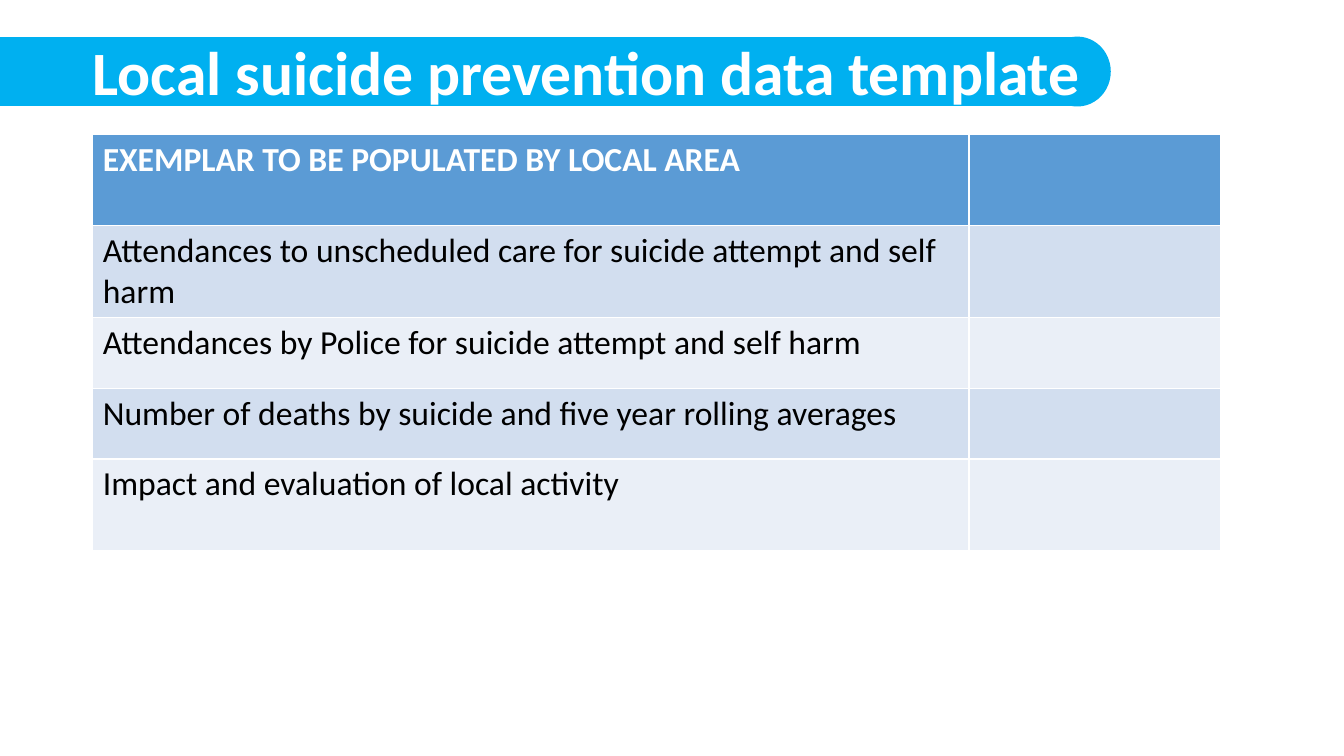
"""Build the local suicide prevention data template slide."""
from pptx import Presentation
from pptx.dml.color import RGBColor
from pptx.enum.shapes import MSO_SHAPE
from pptx.enum.text import MSO_ANCHOR, MSO_AUTO_SIZE, PP_ALIGN
from pptx.util import Inches, Pt

RECTANGLE, OVAL = MSO_SHAPE.RECTANGLE, MSO_SHAPE.OVAL
MIDDLE, LEFT, NO_FIT = MSO_ANCHOR.MIDDLE, PP_ALIGN.LEFT, MSO_AUTO_SIZE.NONE
TITLE_ONLY = 5

WHITE = RGBColor(0xFF, 0xFF, 0xFF)
BLACK = RGBColor(0x00, 0x00, 0x00)
BANNER_BLUE = RGBColor(0x00, 0xB0, 0xF0)
HEADER_BLUE = RGBColor(0x5B, 0x9B, 0xD5)
BANDS = [RGBColor(0xEA, 0xEF, 0xF7), RGBColor(0xD2, 0xDE, 0xEF)]

TITLE = "Local suicide prevention data template"
ROWS = [
    ("EXEMPLAR TO BE POPULATED BY LOCAL AREA", 0.91),
    ("Attendances to unscheduled care for suicide attempt and self harm", 0.91),
    ("Attendances by Police for suicide attempt and self harm", 0.7),
    ("Number of deaths by suicide and five year rolling averages", 0.7),
    ("Impact and evaluation of local activity", 0.91),
]
COLUMN_WIDTHS = [8.69, 2.5]
BANNER_PARTS = [(RECTANGLE, 0, 10.73), (OVAL, 10.36, 0.65)]
BANNER_TOP, BANNER_HEIGHT = 0.37, 0.68


def write_text(frame, text, size, color, bold=False, line_spacing=1.0):
    para = frame.paragraphs[0]
    para.alignment = LEFT
    para.line_spacing = line_spacing
    span = para.add_run()
    span.text = text
    span.font.name = "Calibri"
    span.font.size = Pt(size)
    span.font.bold = bold
    span.font.color.rgb = color


def add_banner(page):
    group = page.shapes.add_group_shape()
    for kind, left, width in BANNER_PARTS:
        part = group.shapes.add_shape(kind, Inches(left), Inches(BANNER_TOP),
                                      Inches(width), Inches(BANNER_HEIGHT))
        part.shadow.inherit = False
        part.fill.solid()
        part.fill.fore_color.rgb = BANNER_BLUE
        part.line.color.rgb = BANNER_BLUE
        part.line.width = Pt(1)


def place_title(page):
    title = page.shapes.title
    title.left, title.top = Inches(0.82), Inches(0.35)
    title.width, title.height = Inches(11.5), Inches(0.8)
    frame = title.text_frame
    frame.word_wrap = True
    frame.auto_size = NO_FIT
    frame.vertical_anchor = MIDDLE
    write_text(frame, TITLE, 44, WHITE, bold=True, line_spacing=0.9)
    page.shapes._spTree.append(title._element)


def add_data_table(page):
    total_height = sum(height for _, height in ROWS)
    table = page.shapes.add_table(
        len(ROWS), len(COLUMN_WIDTHS), Inches(0.92), Inches(1.33),
        Inches(sum(COLUMN_WIDTHS)), Inches(total_height)).table
    for column, width in zip(table.columns, COLUMN_WIDTHS):
        column.width = Inches(width)
    for index, (text, height) in enumerate(ROWS):
        row = table.rows[index]
        row.height = Inches(height)
        header = index == 0
        for cell in row.cells:
            cell.fill.solid()
            cell.fill.fore_color.rgb = HEADER_BLUE if header else BANDS[index % 2]
        write_text(row.cells[0].text_frame, text, 24,
                   WHITE if header else BLACK, bold=header)


def main():
    deck = Presentation()
    deck.slide_width, deck.slide_height = Inches(13.33), Inches(7.5)
    page = deck.slides.add_slide(deck.slide_layouts[TITLE_ONLY])
    add_banner(page)
    place_title(page)
    add_data_table(page)
    deck.save("out.pptx")


if __name__ == "__main__":
    main()
